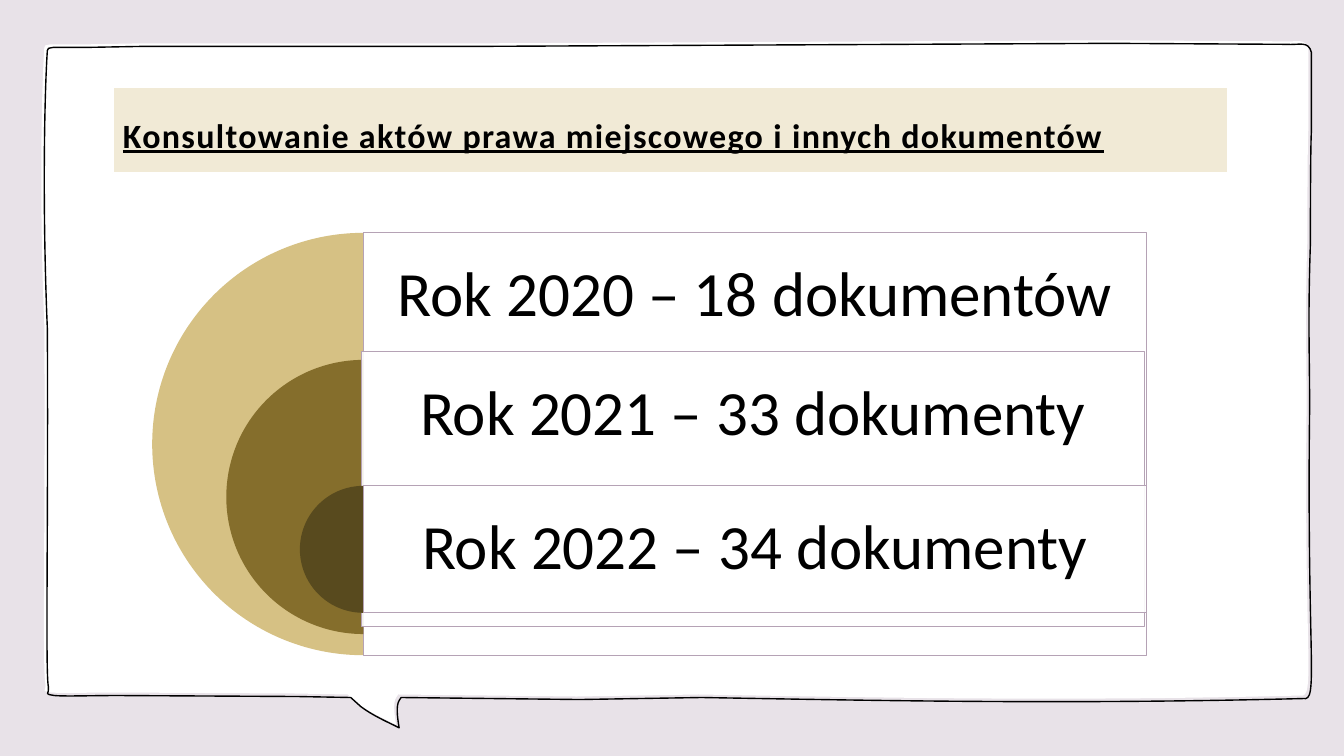
from dataclasses import dataclass

from lxml.etree import SubElement
from pptx import Presentation
from pptx.dml.color import RGBColor
from pptx.enum.shapes import MSO_SHAPE as SHAPE
from pptx.enum.text import MSO_ANCHOR as ANCHOR, MSO_AUTO_SIZE as AUTO, PP_ALIGN as ALIGN
from pptx.oxml.ns import qn
from pptx.util import Inches, Pt

COLORS = {
    "background": "E8E2E8", "white": "FFFFFF", "black": "000000",
    "title": "F1EAD6", "border": "B5A2B5",
    "sand": "D6C184", "olive": "856E2C", "brown": "584A1E",
}
FONT = "Calibri"
CELL = Inches(0.1)  # the slide is a grid of 133.3 columns by 75 rows
PANEL_WIDTH = 77.6
LABEL_HEIGHT = 12.6
PIE_CENTER = 36.05
OUTLINE_OFFSET = 0.3

# Two numbers end a straight segment, six describe a cubic curve.
BUBBLE_START = (109.9, 4)
BUBBLE = [
    (127.3, 4.1), (128.6, 4.2, 129.5, 3.7, 129.8, 4.9), (129.8, 7.6),
    (129.8, 9.3, 129.8, 11, 129.8, 12.7), (129.7, 14, 129.7, 23.3, 129.7, 23.9),
    (129.4, 32.7, 129.7, 36.3, 129.6, 42.2), (129.4, 65.4, 130.5, 69.3, 129, 69),
    (105.3, 69.6, 86.9, 69.2, 69.3, 68.9), (57.2, 69.1), (39.5, 68.9), (39.3, 69.2),
    (39, 69.7, 39.1, 70.7, 39.3, 71.9), (38.1, 71.3, 36.7, 70.7, 35.5, 69.8),
    (34.5, 68.9), (29.2, 68.8), (11.4, 68.7), (8.6, 68.7, 6.3, 68.8, 5.1, 68.7),
    (4, 68.5, 4.6, 68.7, 4.5, 67.8), (4.2, 66.3, 4.5, 51.9, 4.4, 32.3),
    (3.9, 20.4, 4.1, 9.3, 4.4, 4.7), (4.5, 4.6, 4.5, 4.5, 4.5, 4.5),
    (5, 4.4), (7.4, 4.4), (8.6, 4.4), (14, 4.3), (47.7, 4.3), (109.9, 4),
]


@dataclass
class Year:
    label: str
    color: str
    pie_top: float
    panel_left: float
    panel_top: float
    size: float  # height of the panel and diameter of the pie


YEARS = [
    Year("Rok 2020 – 18 dokumentów", "sand", 23.1, 36.1, 23.1, 41.9),
    Year("Rok 2021 – 33 dokumenty", "olive", 35.7, 35.9, 34.9, 27.2),
    Year("Rok 2022 – 34 dokumenty", "brown", 48.2, 36.1, 48.2, 12.6),
]


def cells(*values: float) -> list[int]:
    return [round(v * CELL) for v in values]


def rgb(name: str) -> RGBColor:
    return RGBColor.from_string(COLORS[name])


def paint(sp, fill: str | None = None, line: str | None = None, width: float = 1) -> None:
    sp.shadow.inherit = False
    if fill:
        sp.fill.solid()
        sp.fill.fore_color.rgb = rgb(fill)
    else:
        sp.fill.background()
    if line:
        sp.line.color.rgb = rgb(line)
        sp.line.width = Pt(width)
    else:
        sp.line.fill.background()


def bend(sp, offset: float) -> None:
    """Turn the bubble's six-number segments into cubic curves."""
    segments = list(sp._element.iter(qn("a:lnTo")))
    for straight, numbers in zip(segments, BUBBLE):
        if len(numbers) == 2:
            continue
        curve = straight.makeelement(qn("a:cubicBezTo"))
        for x, y in zip(numbers[::2], numbers[1::2]):
            px, py = cells(x + offset, y + offset)
            SubElement(curve, qn("a:pt"), x=str(px - sp.left), y=str(py - sp.top))
        straight.getparent().replace(straight, curve)


def add_bubble(slide, offset: float, fill: str | None, line: str | None) -> None:
    start, *ends = [cells(x + offset, y + offset)
                    for x, y in [BUBBLE_START, *(numbers[-2:] for numbers in BUBBLE)]]
    builder = slide.shapes.build_freeform(*start)
    builder.add_line_segments(ends, close=True)
    sp = builder.convert_to_shape()
    bend(sp, offset)
    paint(sp, fill, line)


def write(tf, text: str, size: float, align: ALIGN):
    tf.word_wrap = True
    tf.auto_size = AUTO.NONE
    tf.vertical_anchor = ANCHOR.MIDDLE
    tf.text = text
    p = tf.paragraphs[0]
    p.alignment = align
    r = p.runs[0]
    r.font.name, r.font.size = FONT, Pt(size)
    r.font.color.rgb = rgb("black")
    return p


def add_title(slide, text: str) -> None:
    sp = slide.shapes.title
    slide.shapes._spTree.append(sp._element)  # bring in front of the bubble
    sp.left, sp.top, sp.width, sp.height = cells(11.2, 8.6, 110.6, 8.6)
    paint(sp, "title", "white", 1.5)
    tf = sp.text_frame
    r = write(tf, text, 24.3, ALIGN.LEFT).runs[0]
    tf.margin_top = Inches(0.14)
    r.font.bold = r.font.underline = True
    r.font._element.set("spc", "100")


def add_year(slide, year: Year) -> None:
    shapes = slide.shapes
    pie = shapes.add_shape(SHAPE.PIE, *cells(
        PIE_CENTER - year.size / 2, year.pie_top, year.size, year.size))
    pie.adjustments[0], pie.adjustments[1] = 54, 162  # left half
    paint(pie, year.color)

    panel = shapes.add_shape(SHAPE.RECTANGLE, *cells(
        year.panel_left, year.panel_top, PANEL_WIDTH, year.size))
    paint(panel, "white", "border", 0.5)
    color = panel._element.spPr.find(qn("a:solidFill"))[0]
    SubElement(color, qn("a:alpha"), val="90000")

    label = shapes.add_textbox(*cells(
        year.panel_left, year.panel_top, PANEL_WIDTH, LABEL_HEIGHT))
    tf = label.text_frame
    tf.margin_left = tf.margin_right = tf.margin_top = tf.margin_bottom = Inches(0.19)
    write(tf, year.label, 45, ALIGN.CENTER).line_spacing = 0.9


def main() -> None:
    prs = Presentation()
    prs.slide_width, prs.slide_height = cells(133.33, 75)
    slide = prs.slides.add_slide(prs.slide_layouts[5])
    slide.background.fill.solid()
    slide.background.fill.fore_color.rgb = rgb("background")
    add_bubble(slide, 0, "white", None)
    add_bubble(slide, OUTLINE_OFFSET, None, "black")
    add_title(slide, "Konsultowanie aktów prawa miejscowego i innych dokumentów")
    for year in YEARS:
        add_year(slide, year)
    prs.save("out.pptx")


if __name__ == "__main__":
    main()
